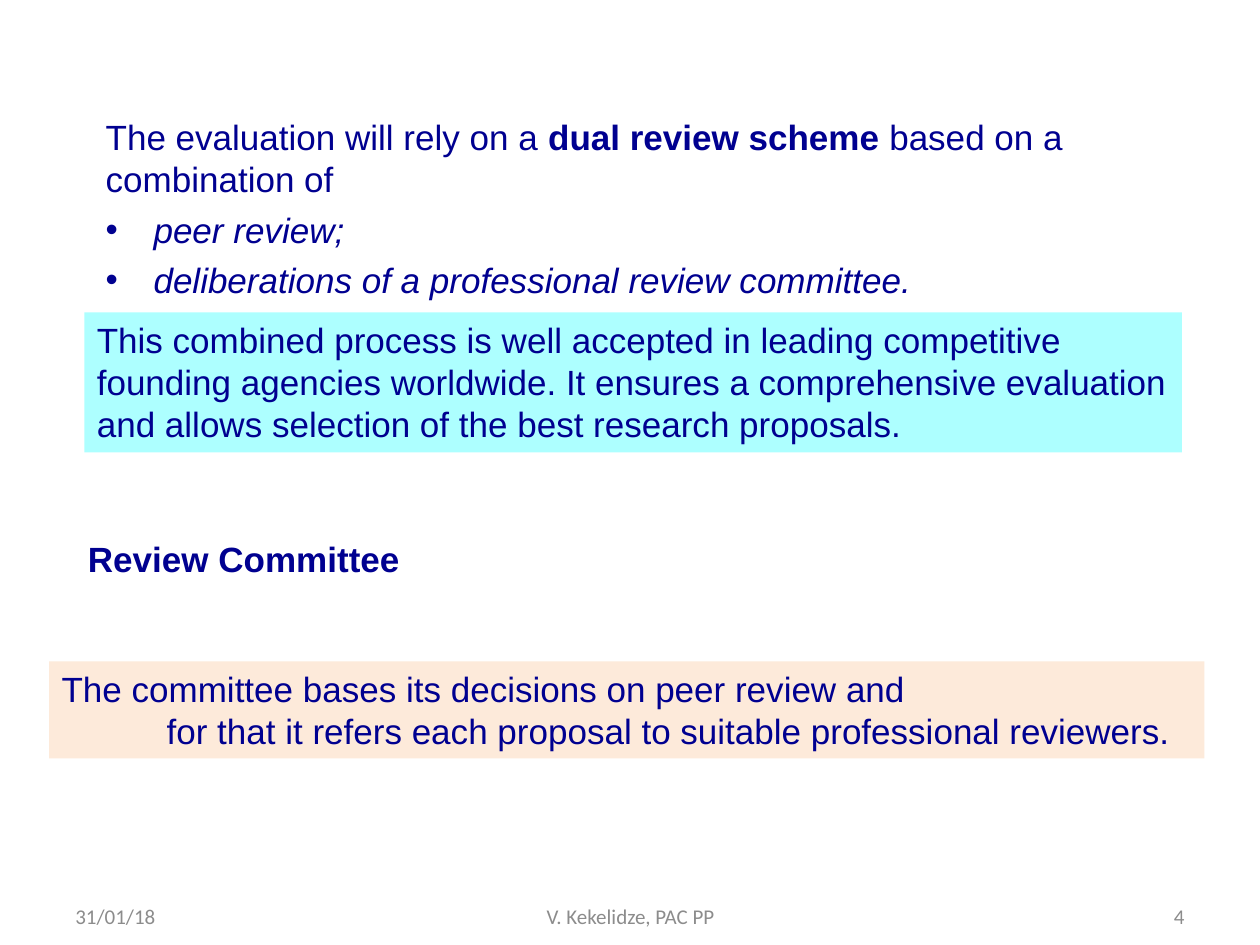
from dataclasses import dataclass
from lxml.etree import SubElement
from pptx import Presentation
from pptx.dml.color import RGBColor as Rgb
from pptx.enum.shapes import MSO_SHAPE as Kind
from pptx.enum.text import MSO_ANCHOR as Anchor, MSO_AUTO_SIZE as Fit, PP_ALIGN as Align
from pptx.oxml.ns import qn
from pptx.util import Inches, Pt


@dataclass(frozen=True)
class Style:
    font: str
    size: int
    color: str


class Theme:
    body = Style("Arial", 20, "000090")
    foot = Style("Calibri", 12, "8C8C8C")
    cyan = "ADFFFF"
    peach = "FDEADA"


# A paragraph is (runs, align, bullet); a run is (text, marks), b bold, i italic.
def para(text, marks="", align=Align.LEFT, bullet=False):
    return [(text, marks)], align, bullet


SCHEME = [
    ([("The evaluation will rely on a ", ""),
      ("dual review scheme ", "b"),
      ("based on a combination of", "")], Align.LEFT, False),
    para("peer review;", "i", bullet=True),
    para("deliberations of a professional review committee.", "i", bullet=True),
]
PROCESS = [para(
    "This combined process is well accepted in leading competitive founding "
    "agencies worldwide. It ensures a comprehensive evaluation and allows "
    "selection of the best research proposals.")]
HEAD = [para("Review Committee", "b")]
BASIS = [
    para("The committee bases its decisions on peer review and"),
    para("for that it refers each proposal to suitable professional reviewers.",
         align=Align.RIGHT),
]
FOOT = [
    ("31/01/18", Align.LEFT, 0.5, 2.33),
    ("V. Kekelidze, PAC PP", Align.CENTER, 3.42, 3.17),
    ("4", Align.RIGHT, 7.17, 2.33),
]


def indent(par):
    """Give the paragraph a hanging round bullet."""
    props = par._p.get_or_add_pPr()
    hang = Inches(0.38)
    props.set("marL", str(hang))
    props.set("indent", str(-hang))
    SubElement(props, qn("a:buFont"), typeface="Arial")
    SubElement(props, qn("a:buChar"), char="•")


def write(frame, paras, style):
    for n, (runs, align, bullet) in enumerate(paras):
        par = frame.add_paragraph() if n else frame.paragraphs[0]
        par.alignment = align
        if bullet:
            par.line_spacing = 1.2
            indent(par)
        for text, marks in runs:
            run = par.add_run()
            run.text = text
            font = run.font
            font.name, font.size = style.font, Pt(style.size)
            font.color.rgb = Rgb.from_string(style.color)
            font.bold, font.italic = "b" in marks, "i" in marks


def block(slide, paras, at, fill=None, style=Theme.body, anchor=Anchor.TOP,
          fit=Fit.SHAPE_TO_FIT_TEXT, wrap=True):
    """Add a text block, as a filled rectangle when a fill is given."""
    area = [Inches(v) for v in at]
    if fill:
        shape = slide.shapes.add_shape(Kind.RECTANGLE, *area)
        shape.shadow.inherit = False
        shape.fill.solid()
        shape.fill.fore_color.rgb = Rgb.from_string(fill)
        shape.line.fill.background()
    else:
        shape = slide.shapes.add_textbox(*area)
    frame = shape.text_frame
    frame.word_wrap, frame.auto_size = wrap, fit
    frame.vertical_anchor = anchor
    write(frame, paras, style)
    return frame


def main():
    deck = Presentation()
    deck.slide_width, deck.slide_height = Inches(10), Inches(7.5)
    slide = deck.slides.add_slide(deck.slide_layouts[6])
    block(slide, PROCESS, (0.67, 2.48, 8.71, 1.11), Theme.cyan)
    block(slide, SCHEME, (0.74, 0.87, 8.71, 1.57))
    for text, align, left, width in FOOT:
        block(slide, [para(text, align=align)], (left, 7.02, width, 0.4),
              style=Theme.foot, anchor=Anchor.BOTTOM, fit=Fit.NONE)
    block(slide, HEAD, (0.6, 4.22, 2.7, 0.44), wrap=False)
    basis = block(slide, BASIS, (0.39, 5.25, 9.17, 0.77), Theme.peach)
    basis.margin_right = Inches(0.27)
    deck.save("out.pptx")


if __name__ == "__main__":
    main()
